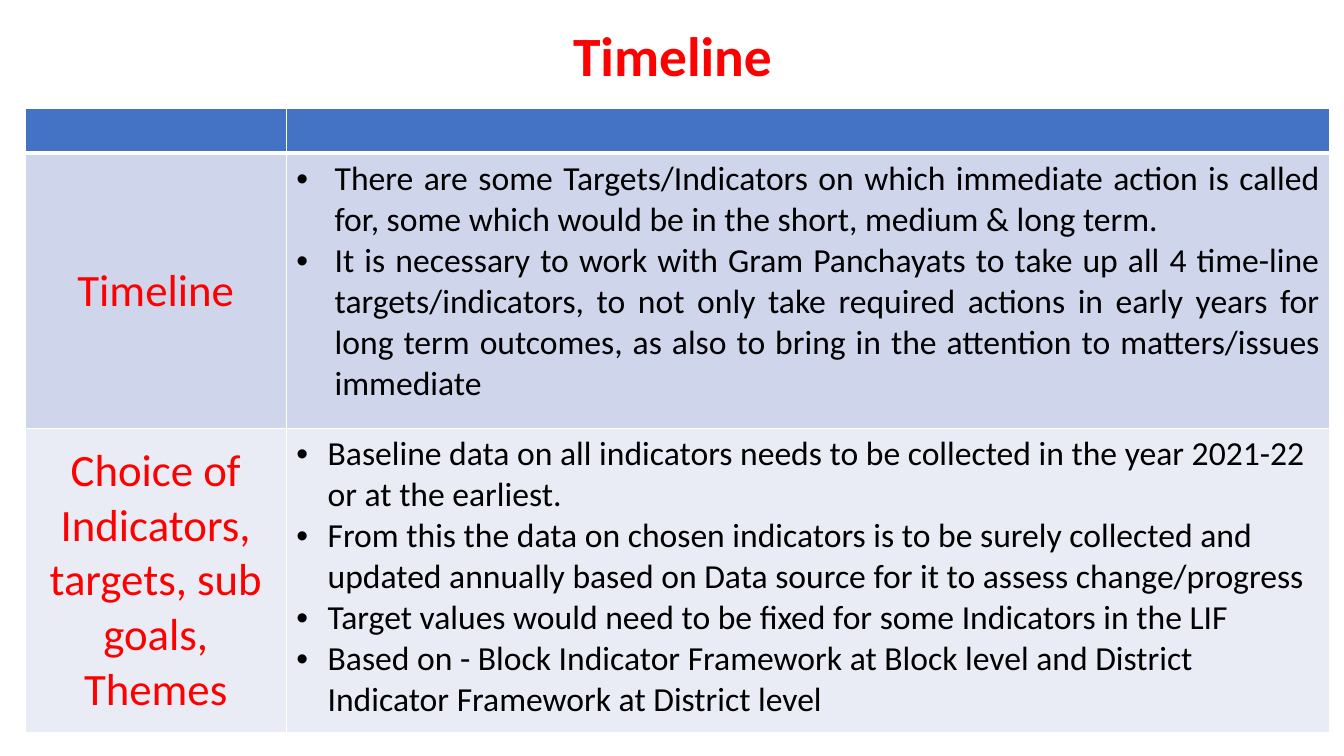
"""Builds the Timeline slide: a red title above a two-column table."""
import pptx
import pptx.dml.color
import pptx.enum.text
import pptx.oxml
import pptx.oxml.ns
import pptx.util

Inches = pptx.util.Inches
Pt = pptx.util.Pt
ALIGN = pptx.enum.text.PP_ALIGN
ANCHOR = pptx.enum.text.MSO_ANCHOR

ROWS = [
    ("Timeline", ALIGN.JUSTIFY, 0.38, "CFD5EA", [
        "There are some Targets/Indicators on which immediate action is called for, "
        "some which would be in the short, medium & long term.",
        "It is necessary to work with Gram Panchayats to take up all 4 time-line "
        "targets/indicators, to not only take required actions in early years for long term "
        "outcomes, as also to bring in the attention to matters/issues immediate",
    ]),
    ("Choice of Indicators, targets, sub goals, Themes", ALIGN.LEFT, 0.31, "E9EBF5", [
        "Baseline data on all indicators needs to be collected in the year 2021-22 "
        "or at the earliest.",
        "From this the data on chosen indicators is to be surely collected and updated "
        "annually based on Data source for it to assess change/progress",
        "Target values would need to be fixed for some Indicators in the LIF",
        "Based on - Block Indicator Framework at Block level and District Indicator "
        "Framework at District level",
    ]),
]


def color(hex_value):
    return pptx.dml.color.RGBColor.from_string(hex_value)


def assign(target, values):
    for name, value in values.items():
        setattr(target, name, value)


class TimelineSlide:
    font = "Calibri"
    accent = "FF0000"
    ink = "000000"
    header = "4472C4"
    rule = "FFFFFF"

    def __init__(self, deck):
        self.slide = deck.slides.add_slide(deck.slide_layouts[5])

    def add_words(self, paragraph, words, size, ink, align, bold=False, spacing=1.0):
        assign(paragraph, {"alignment": align, "line_spacing": spacing})
        run = paragraph.add_run()
        run.text = words
        assign(run.font, {"name": self.font, "size": Pt(size), "bold": bold})
        run.font.color.rgb = color(ink)

    def title(self, words):
        heading = self.slide.shapes.title
        assign(heading, {"left": Inches(0.92), "top": Inches(0.24),
                         "width": Inches(11.5), "height": Inches(0.68)})
        assign(heading.text_frame, {"vertical_anchor": ANCHOR.MIDDLE, "word_wrap": True})
        self.add_words(heading.text_frame.paragraphs[0], words, 39.6, self.accent,
                       ALIGN.CENTER, True, 0.9)

    def style_cell(self, cell, fill, top=1, bottom=1):
        cell.fill.solid()
        cell.fill.fore_color.rgb = color(fill)
        properties = cell._tc.get_or_add_tcPr()
        widths = {"L": 1, "R": 1, "T": top, "B": bottom}
        for place, (side, width) in enumerate(widths.items()):
            properties.insert(place, pptx.oxml.parse_xml(
                f'<a:ln{side} {pptx.oxml.ns.nsdecls("a")} w="{Pt(width)}"><a:solidFill>'
                f'<a:srgbClr val="{self.rule}"/></a:solidFill></a:ln{side}>'))

    def bullets(self, cell, points, align, indent):
        frame = cell.text_frame
        for number, point in enumerate(points):
            paragraph = frame.add_paragraph() if number else frame.paragraphs[0]
            self.add_words(paragraph, point, 24, self.ink, align)
            properties = paragraph._p.get_or_add_pPr()
            properties.set("marL", str(Inches(indent)))
            properties.set("indent", str(-Inches(indent)))
            for bullet in ('buFont {} typeface="Arial"', 'buChar {} char="•"'):
                properties.append(pptx.oxml.parse_xml(
                    f'<a:{bullet.format(pptx.oxml.ns.nsdecls("a"))}/>'))

    def table(self, rows):
        grid = self.slide.shapes.add_table(len(rows) + 1, 2, Inches(0.25), Inches(1.08),
                                           Inches(12.93), Inches(6.18)).table
        for column, width in zip(grid.columns, (2.59, 10.35)):
            column.width = Inches(width)
        for row, height in zip(grid.rows, (0.44, 2.73, 3.02)):
            row.height = Inches(height)
        for cell in grid.rows[0].cells:
            self.style_cell(cell, self.header, bottom=3)
        for number, (topic, align, indent, fill, points) in enumerate(rows, 1):
            for cell in grid.rows[number].cells:
                self.style_cell(cell, fill, top=3 if number == 1 else 1)
            label, detail = grid.rows[number].cells
            label.vertical_anchor = ANCHOR.MIDDLE
            self.add_words(label.text_frame.paragraphs[0], topic, 32, self.accent,
                           ALIGN.CENTER)
            self.bullets(detail, points, align, indent)


def main():
    deck = pptx.Presentation()
    assign(deck, {"slide_width": Inches(13.33), "slide_height": Inches(7.5)})
    page = TimelineSlide(deck)
    page.title("Timeline")
    page.table(ROWS)
    deck.save("out.pptx")


if __name__ == "__main__":
    main()
